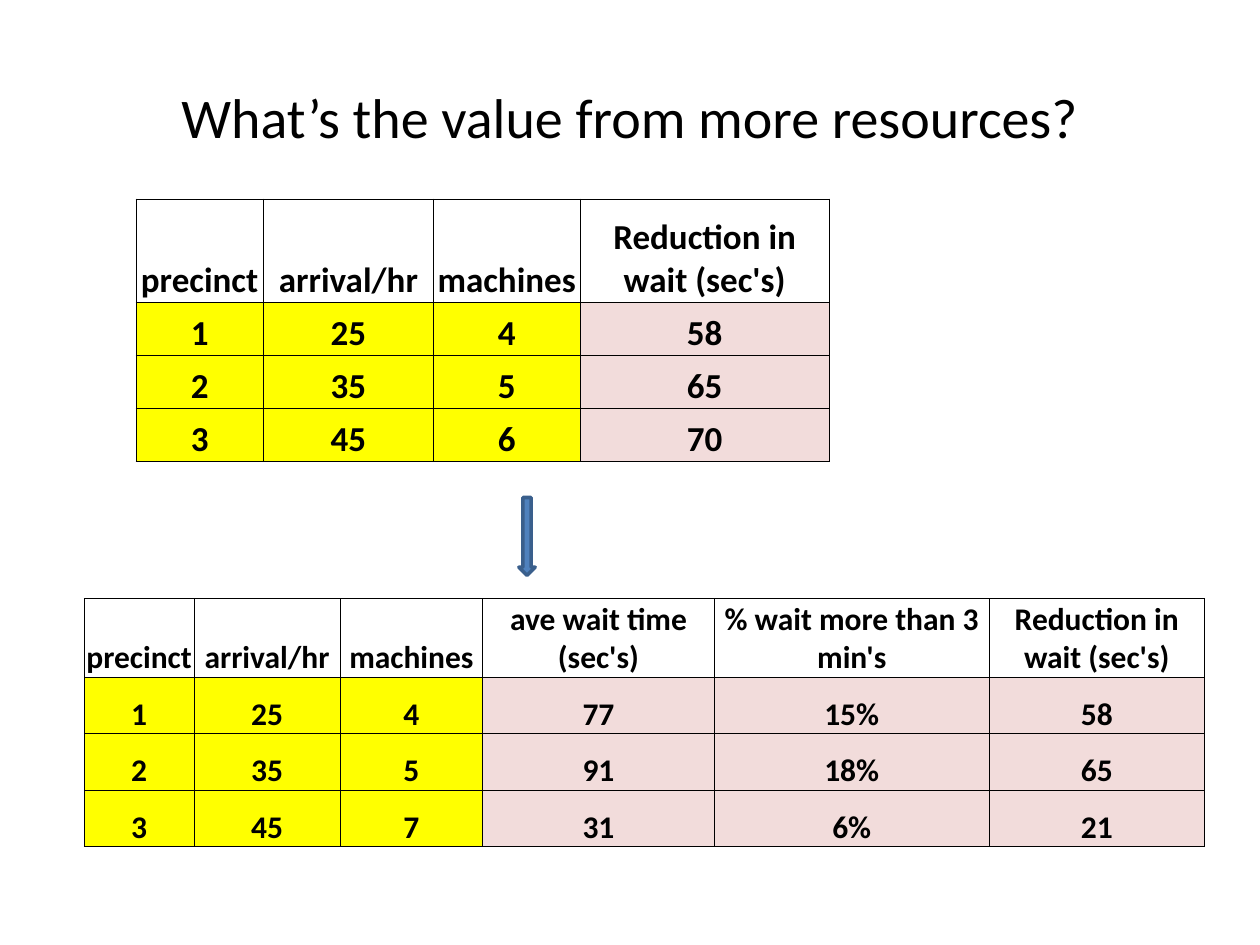
from lxml.etree import SubElement
from pptx import Presentation
from pptx.dml.color import RGBColor
from pptx.enum.shapes import MSO_SHAPE
from pptx.enum.text import MSO_ANCHOR, PP_ALIGN
from pptx.oxml.ns import qn
from pptx.util import Cm, Pt

INPUT_COLUMNS = 3


def color(hex_value):
    return RGBColor.from_string(hex_value)


class SlideBuilder:
    font = "Calibri"
    ink = "000000"
    input_fill = "FFFF00"
    result_fill = "F2DCDB"
    border_width = Pt(0.5)

    def __init__(self, slide):
        self.slide = slide

    def add_text(self, frame, text, size, bold=False):
        paragraph = frame.paragraphs[0]
        paragraph.alignment = PP_ALIGN.CENTER
        run = paragraph.add_run()
        run.text = text
        run.font.name = self.font
        run.font.size = Pt(size)
        run.font.bold = bold
        run.font.color.rgb = color(self.ink)

    def title(self, text, left, top, width, height):
        box = self.slide.shapes.add_textbox(Cm(left), Cm(top), Cm(width), Cm(height))
        frame = box.text_frame
        frame.word_wrap = True
        frame.vertical_anchor = MSO_ANCHOR.MIDDLE
        self.add_text(frame, text, 32)

    def down_arrow(self, left, top, width, height):
        arrow = self.slide.shapes.add_shape(
            MSO_SHAPE.DOWN_ARROW, Cm(left), Cm(top), Cm(width), Cm(height))
        arrow.shadow.inherit = False
        arrow.fill.solid()
        arrow.fill.fore_color.rgb = color("4F81BD")
        arrow.line.color.rgb = color("3A5F8C")
        arrow.line.width = Pt(2)

    def border(self, cell):
        properties = cell._tc.get_or_add_tcPr()
        for side in ("a:lnL", "a:lnR", "a:lnT", "a:lnB"):
            line = SubElement(properties, qn(side), w=str(self.border_width))
            fill = SubElement(line, qn("a:solidFill"))
            SubElement(fill, qn("a:srgbClr"), val=self.ink)

    def cell(self, cell, text, size, fill):
        cell.margin_left = cell.margin_right = cell.margin_top = Cm(0.02)
        cell.margin_bottom = 0
        cell.vertical_anchor = MSO_ANCHOR.BOTTOM
        self.border(cell)
        if fill:
            cell.fill.solid()
            cell.fill.fore_color.rgb = color(fill)
        else:
            cell.fill.background()
        self.add_text(cell.text_frame, text, size, bold=True)

    def table(self, records, left, top, widths, header_height, row_height, size):
        heights = [header_height] + [row_height] * (len(records) - 1)
        table = self.slide.shapes.add_table(
            len(records), len(widths), Cm(left), Cm(top),
            Cm(sum(widths)), Cm(sum(heights))).table
        table.first_row = table.horz_banding = False
        for column, width in zip(table.columns, widths):
            column.width = Cm(width)
        for row, height in zip(table.rows, heights):
            row.height = Cm(height)
        for r, record in enumerate(records):
            for c, text in enumerate(record):
                body_fill = self.input_fill if c < INPUT_COLUMNS else self.result_fill
                self.cell(table.cell(r, c), text, size, body_fill if r else None)


def main():
    deck = Presentation()
    deck.slide_width, deck.slide_height = Cm(25.4), Cm(19.05)
    builder = SlideBuilder(deck.slides.add_slide(deck.slide_layouts[6]))

    input_headings = ["precinct", "arrival/hr", "machines"]
    reduction_heading = "Reduction in wait (sec's)"
    current_resources = [
        input_headings + [reduction_heading],
        ["1", "25", "4", "58"],
        ["2", "35", "5", "65"],
        ["3", "45", "6", "70"],
    ]
    added_resources = [
        input_headings
        + ["ave wait time (sec's)", "% wait more than 3 min's", reduction_heading],
        ["1", "25", "4", "77", "15%", "58"],
        ["2", "35", "5", "91", "18%", "65"],
        ["3", "45", "7", "31", "6%", "21"],
    ]

    builder.title("What’s the value from more resources?", 1.27, 0.76, 22.86, 3.18)
    builder.down_arrow(10.46, 10.03, 0.33, 1.57)
    builder.table(current_resources, 2.74, 4.01, [2.57, 3.43, 2.95, 5.03],
                  2.08, 1.07, 20)
    builder.table(added_resources, 1.7, 12.07, [2.21, 2.95, 2.87, 4.67, 5.54, 4.34],
                  1.58, 1.14, 18)
    deck.save("out.pptx")


if __name__ == "__main__":
    main()
